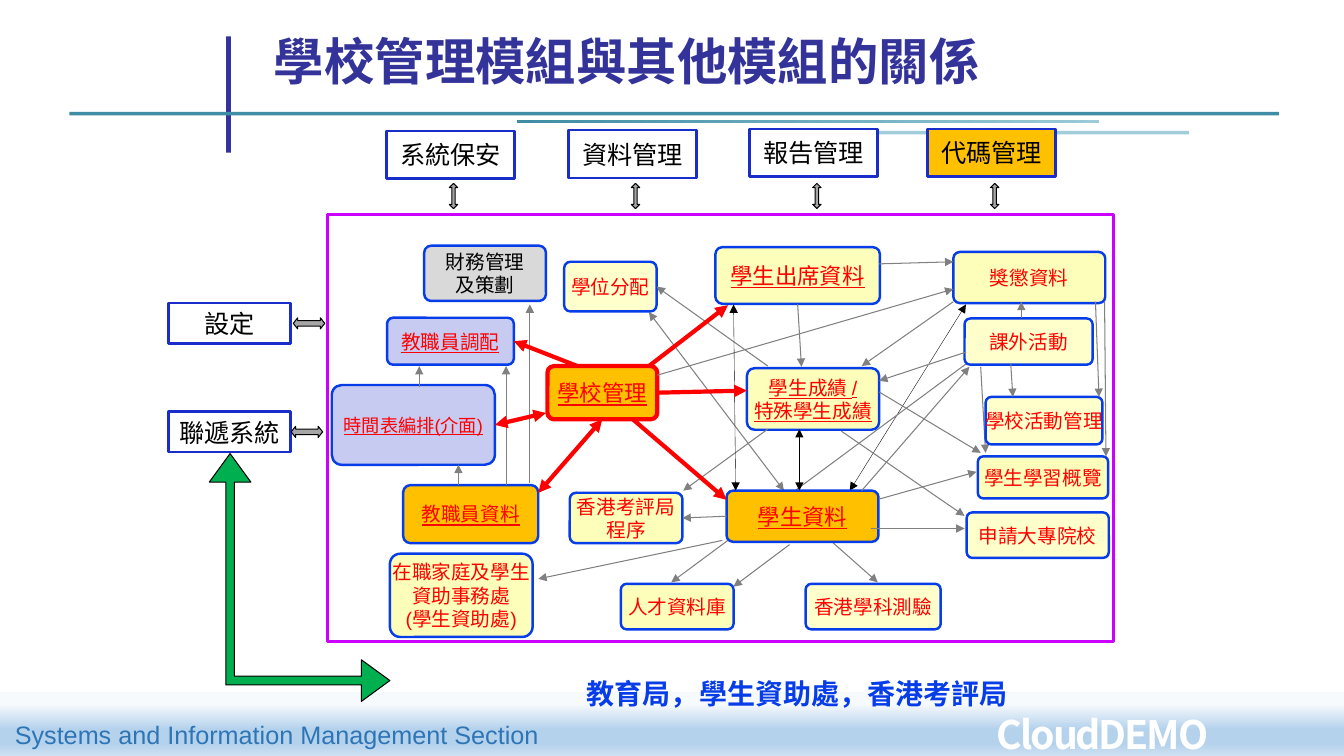
from lxml import etree
from pptx import Presentation
from pptx.dml.color import RGBColor
from pptx.enum.shapes import MSO_CONNECTOR, MSO_SHAPE
from pptx.enum.text import MSO_ANCHOR, MSO_AUTO_SIZE, PP_ALIGN
from pptx.oxml.ns import qn
from pptx.util import Pt

RECTANGLE = MSO_SHAPE.RECTANGLE
ROUNDED = MSO_SHAPE.ROUNDED_RECTANGLE
STRAIGHT = MSO_CONNECTOR.STRAIGHT
LEFT, CENTER = PP_ALIGN.LEFT, PP_ALIGN.CENTER
TOP, MIDDLE, BOTTOM = MSO_ANCHOR.TOP, MSO_ANCHOR.MIDDLE, MSO_ANCHOR.BOTTOM

COLOURS = {
    "white": "FFFFFF", "black": "000000", "red": "FF0000", "grey": "808080",
    "navy": "333399", "teal": "3F8DA5", "aqua": "9BCAD9", "pale aqua": "A1CDDB",
    "footer": "2E75B6", "mist": "F7FAFD", "sky": "B5D2EC", "haze": "CEE1F2",
    "blue": "063DE8", "royal": "182DCA", "purple": "CC00FF", "green": "00B050",
    "yellow": "FCFEB9", "cream": "FFFFCC", "orange": "FFC000",
    "lilac": "C7CBF1", "silver": "D9D9D9", "arrow": "A6A6A6",
}


def add_block(kind, area, fill=None, line=None, weight=0.75, adjustments=()):
    shape = slide.shapes.add_shape(kind, *[Pt(value) for value in area])
    shape.shadow.inherit = False
    if fill:
        shape.fill.solid()
        shape.fill.fore_color.rgb = RGBColor.from_string(COLOURS[fill])
    else:
        shape.fill.background()
    if line:
        shape.line.color.rgb = RGBColor.from_string(COLOURS[line])
        shape.line.width = Pt(weight)
    else:
        shape.line.fill.background()
    for index, value in enumerate(adjustments):
        shape.adjustments[index] = value
    return shape


def write_text(shape, text, size, colour, align=CENTER, anchor=MIDDLE, wrap=False,
               margin=0, name="Arial", bold=False, underline=False):
    frame = shape.text_frame
    frame_format = {
        "auto_size": MSO_AUTO_SIZE.NONE, "word_wrap": wrap, "vertical_anchor": anchor,
        "margin_left": Pt(margin), "margin_right": Pt(margin),
        "margin_top": Pt(margin / 2), "margin_bottom": Pt(margin / 2),
    }
    for attribute, value in frame_format.items():
        setattr(frame, attribute, value)
    frame.text = text
    font_format = {"name": name, "size": Pt(size), "bold": bold, "underline": underline}
    for paragraph in frame.paragraphs:
        paragraph.alignment = align
        for run in paragraph.runs:
            for attribute, value in font_format.items():
                setattr(run.font, attribute, value)
            run.font.color.rgb = RGBColor.from_string(COLOURS[colour])


presentation = Presentation()
presentation.slide_width = Pt(960)
presentation.slide_height = Pt(540)
slide = presentation.slides.add_slide(presentation.slide_layouts[5])

title = slide.shapes.title
title_area = {"left": 188.5, "top": 8, "width": 549.5, "height": 60}
for attribute, value in title_area.items():
    setattr(title, attribute, Pt(value))
write_text(title, "學校管理模組與其他模組的關係", 36, "navy", LEFT, BOTTOM, True, 7.2, bold=True)

footer_band = add_block(RECTANGLE, (0, 494.5, 960, 45.5), "sky")
add_block(RECTANGLE, (161.5, 26, 3.5, 83), "navy")
add_block(RECTANGLE, (49.5, 80, 864, 2.5), "teal")
middle_rule = add_block(RECTANGLE, (369.5, 85.5, 415.5, 2.5), "teal")
add_block(RECTANGLE, (585.5, 93.5, 264, 2.5), "pale aqua")

gradients = [
    (footer_band, 270, [(18, "mist"), (58, "sky"), (81, "sky"), (100, "haze")]),
    (middle_rule, 0, [(0, "teal"), (100, "aqua")]),
]
for shape, angle, stops in gradients:
    shape.fill.gradient()
    shape.fill.gradient_angle = angle
    stop_list = shape._element.spPr.find(".//" + qn("a:gsLst"))
    for stop in list(stop_list):
        stop_list.remove(stop)
    for position, colour in stops:
        stop = etree.SubElement(stop_list, qn("a:gs"), pos=str(position * 1000))
        etree.SubElement(stop, qn("a:srgbClr"), val=COLOURS[colour])

labels = [
    ((3.5, 510.5, 400, 29), "Systems and Information Management Section", 18, "footer",
     {"align": LEFT, "anchor": TOP, "wrap": True}),
    ((705, 504, 196.5, 41), "CloudDEMO", 28, "white",
     {"align": LEFT, "anchor": TOP, "wrap": True, "name": "Noto Sans CJK SC", "bold": True}),
    ((399, 474, 341, 42), "教育局，學生資助處，香港考評局", 20, "blue", {"bold": True}),
]
for area, text, size, colour, options in labels:
    label = slide.shapes.add_textbox(*[Pt(value) for value in area])
    write_text(label, text, size, colour, margin=7.2, **options)
    if text == "CloudDEMO":
        label.text_frame.paragraphs[0].runs[0].font._element.set("spc", "-150")

add_block(RECTANGLE, (234, 153.5, 561.5, 305), None, "purple", 2)

for left, top, text, fill in [(276, 93.5, "系統保安", "white"), (406, 93, "資料管理", "white"),
                              (535.5, 92, "報告管理", "white"), (662.5, 92, "代碼管理", "orange")]:
    box = add_block(RECTANGLE, (left, top, 91.5, 34), fill, "royal", 1.75)
    write_text(box, text, 18, "black")
    add_block(MSO_SHAPE.UP_DOWN_ARROW, (left + 45, 131, 6, 18), "arrow", "black",
              adjustments=(0.5, 0.4))

for top, text, arrow_left in [(216.5, "設定", 209.5), (294, "聯遞系統", 208)]:
    box = add_block(RECTANGLE, (120.5, top, 87, 29), "white", "royal", 1.75)
    write_text(box, text, 18, "black")
    add_block(MSO_SHAPE.LEFT_RIGHT_ARROW, (arrow_left, top + 10.5, 22.5, 8), "arrow", "black",
              adjustments=(0.5, 0.4))

exchange_arrow = add_block(MSO_SHAPE.LEFT_UP_ARROW, (125.5, 348, 177, 129), "green", "black",
                           adjustments=(0.048, 0.115, 0.158))
exchange_arrow.rotation = 90

modules = [
    ("finance", (303, 175.5, 87, 39.5), "財務管理\n及策劃", "silver", 14, False),
    ("timetable", (237, 275, 116.5, 57), "時間表編排(介面)", "lilac", 13, True),
    ("attendance", (511, 176.5, 117.5, 40.5), "學生出席資料", "yellow", 16, True),
    ("school", (391, 261.5, 78.5, 38), "學校管理", "orange", 16, True),
    ("staff", (288, 346.5, 96.5, 41.5), "教職員資料", "orange", 14, True),
    ("results", (533.5, 263, 94.5, 44), "學生成績 /\n特殊學生成績", "yellow", 14, True),
    ("awards", (681, 180, 108.5, 36.5), "獎懲資料", "yellow", 14, False),
    ("profile", (698.5, 326, 93, 30), "學生學習概覽", "yellow", 14, False),
    ("assessment", (575.5, 417, 96.5, 32.5), "香港學科測驗", "cream", 14, False),
    ("places", (403, 187, 66, 35.5), "學位分配", "cream", 14, False),
    ("extracurricular", (689, 227.5, 91.5, 33), "課外活動", "cream", 14, False),
    ("examination", (407, 352, 80.5, 36), "香港考評局\n程序", "yellow", 14, False),
    ("deployment", (276.5, 227, 90.5, 33.5), "教職員調配", "lilac", 14, True),
    ("assistance", (278.5, 395.5, 102, 59.5), "在職家庭及學生\n資助事務處\n(學生資助處)", "yellow", 14, False),
    ("talent", (443.5, 417, 80.5, 32.5), "人才資料庫", "yellow", 14, False),
    ("student", (519, 350.5, 108.5, 36.5), "學生資料", "orange", 16, True),
    ("application", (690.5, 366, 101.5, 32.5), "申請大專院校", "cream", 14, False),
    ("activities", (704, 283.5, 83.5, 34), "學校活動管理", "cream", 14, False),
]
boxes = {}
for key, area, text, fill, size, underline in modules:
    line, weight = ("red", 3) if key == "school" else ("blue", 1.75)
    boxes[key] = add_block(ROUNDED, area, fill, line, weight, (0.125,))
    write_text(boxes[key], text, size, "black" if key == "finance" else "red", underline=underline)

ONE_WAY, TWO_WAY = ("tailEnd",), ("headEnd", "tailEnd")
arrow_groups = [
    ("grey", 0.75, ONE_WAY, True, [
        ((692, 258.5), (479.5, 416)), ((700.5, 262), (704, 323.5))]),
    ("grey", 0.75, TWO_WAY, True, [
        ((463.5, 223), (560, 350.5)), ((588, 381.5), (627, 416))]),
    ("black", 0.25, TWO_WAY, True, [((607, 350.5), (690, 217.5))]),
    ("grey", 0.75, ONE_WAY, False, [
        ((548.5, 261.5), ("places", 3)), ((327.5, 346.5), (327.5, 332)),
        (("student", 1), ("examination", 3)), ((628, 280), (700.5, 323.5)),
        ((299.5, 276.5), (299.5, 261.5)), ((361.5, 346.5), (361.5, 261.5)),
        ((628, 188.5), (681, 187)), (("attendance", 2), (572.5, 262)),
        ((681, 215.5), (615.5, 261.5)), ((690, 251.5), (628, 272)),
        ((729.5, 227.5), (729.5, 215.5)), ((615.5, 350.5), (692.5, 262)),
        ((548.5, 306.5), (488, 350.5)), ((378.5, 345), (378.5, 217.5)),
        ((516, 386), (384.5, 413.5)), ((628, 356.5), (697.5, 337)),
        ((789, 215.5), (790, 326)), ((469.5, 268), (681, 206.5)),
        ((564, 389), (524, 419)), ((622, 377.5), (689, 377.5)),
        ((601, 308), (689, 368.5)), ((722, 260), (723.5, 283.5)),
        ((782.5, 215.5), (785, 283.5))]),
    ("black", 0.25, TWO_WAY, False, [
        ((571, 306.5), (571, 350.5)), ((524, 217.5), (525.5, 350.5))]),
    ("red", 3, TWO_WAY, False, [
        ((384.5, 352), ("school", 2)), (("timetable", 3), (390, 295))]),
    ("red", 3, ONE_WAY, False, [
        ((463.5, 261.5), (520, 218)), (("school", 3), (533.5, 279)),
        ((452, 299.5), (519, 357)), ((412.5, 261.5), ("deployment", 3))]),
]
for colour, weight, heads, behind, arrows in arrow_groups:
    for begin, end in arrows:
        points = [(0, 0) if point[0] in boxes else point for point in (begin, end)]
        connector = slide.shapes.add_connector(STRAIGHT, *[Pt(v) for point in points for v in point])
        for point, connect in ((begin, connector.begin_connect), (end, connector.end_connect)):
            if point[0] in boxes:
                connect(boxes[point[0]], point[1])
        connector.line.color.rgb = RGBColor.from_string(COLOURS[colour])
        connector.line.width = Pt(weight)
        properties = connector._element.spPr
        for head in heads:
            etree.SubElement(properties.find(qn("a:ln")), qn("a:" + head), type="triangle")
        etree.SubElement(properties, qn("a:effectLst"))
        if behind:
            slide.shapes._spTree.insert(2, connector._element)

presentation.save("out.pptx")
